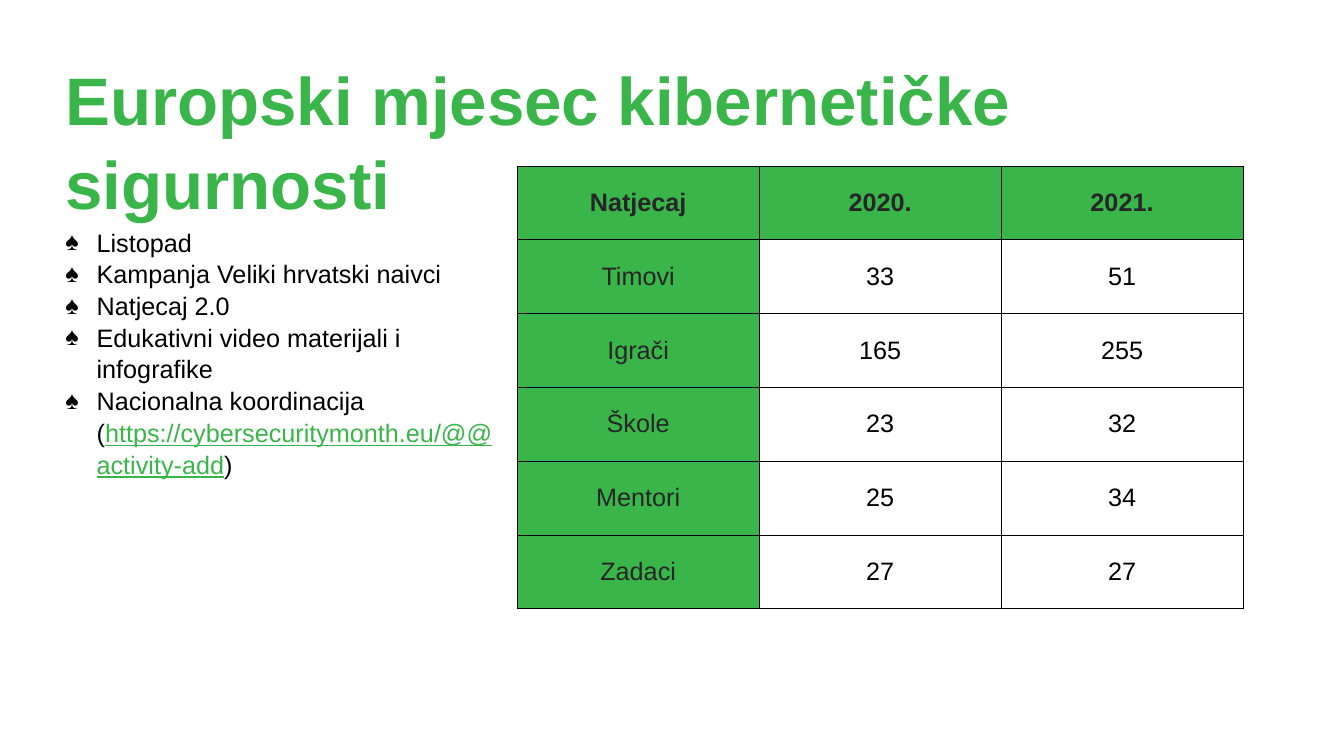
from lxml import etree
from pptx import Presentation
from pptx.dml.color import RGBColor
from pptx.enum.text import MSO_ANCHOR, PP_ALIGN
from pptx.oxml.ns import qn
from pptx.util import Cm, Pt

MIDDLE = MSO_ANCHOR.MIDDLE
CENTER = PP_ALIGN.CENTER
GREEN, BLACK, DARK = "39B54A", "000000", "262626"


def rgb(value):
    return RGBColor.from_string(value)


def add_run(p, text, color, **formats):
    r = p.add_run()
    r.text = text
    r.font.color.rgb = rgb(color)
    for name, value in ({"name": "Arial", "size": Pt(36)} | formats).items():
        setattr(r.font, name, value)


prs = Presentation()
prs.slide_width, prs.slide_height = Cm(67.72), Cm(38.1)
s = prs.slides.add_slide(prs.slide_layouts[6])

# Title
tf = s.shapes.add_textbox(Cm(3.05), Cm(2.6), Cm(61.6), Cm(4.39)).text_frame
tf.word_wrap = True
p = tf.paragraphs[0]
p.line_spacing = 1.05
add_run(p, "Europski mjesec kibernetičke sigurnosti", GREEN, size=Pt(96), bold=True)

# Bullet list
bullets = [
    [("Listopad", BLACK, False)],
    [("Kampanja Veliki hrvatski naivci", BLACK, False)],
    [("Natjecaj 2.0", BLACK, False)],
    [("Edukativni video materijali i infografike", BLACK, False)],
    [("Nacionalna koordinacija (", BLACK, False),
     ("https://cybersecuritymonth.eu/@@activity-add", GREEN, True),
     (")", BLACK, False)],
]
tf = s.shapes.add_textbox(Cm(3.05), Cm(11.23), Cm(22.2), Cm(15.65)).text_frame
tf.word_wrap = True
for i, runs in enumerate(bullets):
    p = tf.add_paragraph() if i else tf.paragraphs[0]
    p.line_spacing = 1.05
    pPr = p._p.get_or_add_pPr()
    pPr.set("marL", str(Cm(1.57)))
    pPr.set("indent", str(-Cm(1.57)))
    color = etree.SubElement(pPr, qn("a:buClr"))
    etree.SubElement(color, qn("a:srgbClr"), val=BLACK)
    etree.SubElement(pPr, qn("a:buFont"), typeface="Arial")
    etree.SubElement(pPr, qn("a:buChar"), char="♠")
    for text, color, underline in runs:
        add_run(p, text, color, underline=underline)

# Results table
rows = [
    ("Natjecaj", "2020.", "2021."),
    ("Timovi", "33", "51"),
    ("Igrači", "165", "255"),
    ("Škole", "23", "32"),
    ("Mentori", "25", "34"),
    ("Zadaci", "27", "27"),
]
col_width, row_height = Cm(12.19), Cm(3.72)
table = s.shapes.add_table(len(rows), 3, Cm(26.06), Cm(8.36),
                           col_width * 3, row_height * len(rows)).table
for col in table.columns:
    col.width = col_width
for i, row in enumerate(rows):
    table.rows[i].height = row_height
    for j, text in enumerate(row):
        cell = table.cell(i, j)
        cell.vertical_anchor = MIDDLE
        p = cell.text_frame.paragraphs[0]
        p.alignment = CENTER
        header = i == 0 or j == 0
        add_run(p, text, DARK if header else BLACK, bold=i == 0)

        # Borders come before the fill in the cell properties
        tcPr = cell._tc.get_or_add_tcPr()
        for side in ("lnL", "lnR", "lnT", "lnB"):
            ln = etree.SubElement(tcPr, qn(f"a:{side}"), w=str(Pt(0.96)))
            fill = etree.SubElement(ln, qn("a:solidFill"))
            etree.SubElement(fill, qn("a:srgbClr"), val=BLACK)
        if header:
            cell.fill.solid()
            cell.fill.fore_color.rgb = rgb(GREEN)
        else:
            cell.fill.background()

prs.save("out.pptx")
